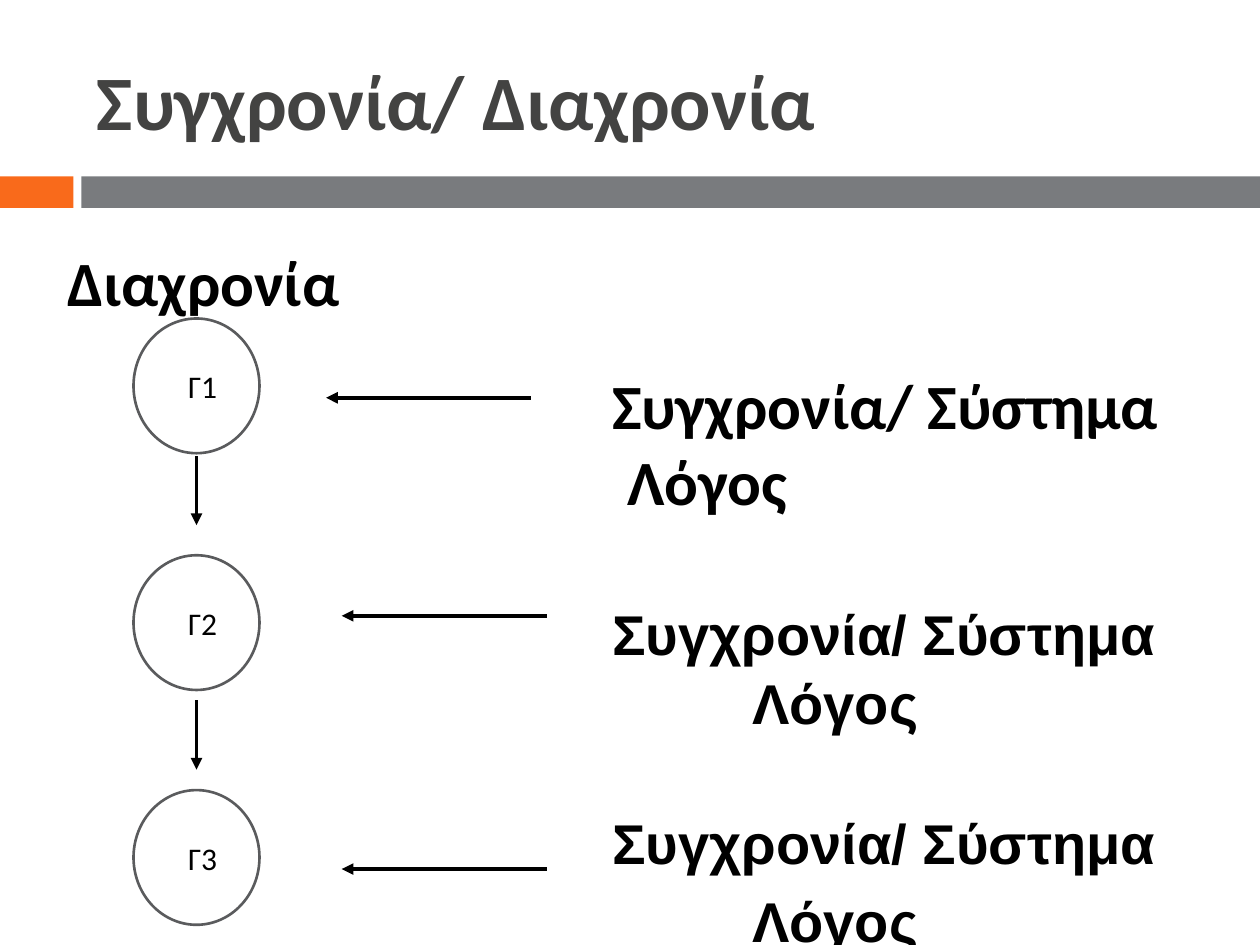
from lxml import etree
from pptx import Presentation
from pptx.dml.color import RGBColor
from pptx.enum import shapes, text
from pptx.oxml.ns import qn
from pptx.util import Pt

BLACK = RGBColor(0x00, 0x00, 0x00)
WHITE = RGBColor(0xFF, 0xFF, 0xFF)
TITLE_GREY = RGBColor(0x43, 0x43, 0x42)
OUTLINE_GREY = RGBColor(0x5A, 0x5B, 0x5D)
BAND_GREY = RGBColor(0x79, 0x7B, 0x7E)
ORANGE = RGBColor(0xF9, 0x6A, 0x1B)

CIRCLE_CENTRE = 112.3
CIRCLE_WIDTH, CIRCLE_HEIGHT = 72, 77
CIRCLES = [("Γ1", 182), ("Γ2", 317.3), ("Γ3", 451.5)]
DOWN_ARROW_TOPS = [260.6, 400.3]
DOWN_ARROW_LENGTH = 39.5
LEFT_ARROWS = [(303.3, 227.3), (312.3, 351.9), (312.3, 496.6)]  # start x, y
LEFT_ARROW_LENGTH = 117
# top, font name, size, indent of the second line, space before it
LABELS = [
    (206, "Calibri", 36, 8.5, 0),
    (339, "Arial", 32, 80, 1),
    (458.5, "Arial", 32, 80, 6),
]


def place(shape, left, top, width, height):
    shape.left, shape.top = Pt(left), Pt(top)
    shape.width, shape.height = Pt(width), Pt(height)


def format_paragraph(paragraph, font_name, size, color, bold=True):
    for run in paragraph.runs:
        run.font.name = font_name
        run.font.size = Pt(size)
        run.font.bold = bold
        run.font.color.rgb = color


def indent(paragraph, distance):
    """Indent the whole paragraph and switch its bullet off."""
    properties = paragraph._p.get_or_add_pPr()
    properties.set("marL", str(Pt(distance)))
    properties.set("indent", "0")
    etree.SubElement(properties, qn("a:buNone"))


def add_band(slide, left, width, color):
    band = slide.shapes.add_shape(
        shapes.MSO_SHAPE.RECTANGLE, Pt(left), Pt(100.8), Pt(width), Pt(18))
    band.shadow.inherit = False
    band.fill.solid()
    band.fill.fore_color.rgb = color
    band.line.fill.background()


def fill_title(title):
    place(title, 48.2, 18, 642, 77.8)
    title.text_frame.text = "Συγχρονία/ Διαχρονία"
    title.text_frame.vertical_anchor = text.MSO_ANCHOR.MIDDLE
    paragraph = title.text_frame.paragraphs[0]
    paragraph.alignment = text.PP_ALIGN.LEFT
    format_paragraph(paragraph, "Calibri", 44, TITLE_GREY)


def fill_heading(body):
    place(body, 7.2, 135.4, 705.6, 410.4)
    body.text_frame.text = "Διαχρονία"
    paragraph = body.text_frame.paragraphs[0]
    paragraph.space_before = Pt(0)
    indent(paragraph, 24)
    format_paragraph(paragraph, "Calibri", 36, BLACK)


def add_circle(slide, label, top):
    circle = slide.shapes.add_shape(
        shapes.MSO_SHAPE.OVAL, Pt(CIRCLE_CENTRE - CIRCLE_WIDTH / 2), Pt(top),
        Pt(CIRCLE_WIDTH), Pt(CIRCLE_HEIGHT))
    circle.shadow.inherit = False
    circle.fill.solid()
    circle.fill.fore_color.rgb = WHITE
    circle.line.color.rgb = OUTLINE_GREY
    circle.line.width = Pt(1.5)
    frame = circle.text_frame
    frame.text = label
    frame.margin_left = Pt(14)
    frame.vertical_anchor = text.MSO_ANCHOR.MIDDLE
    paragraph = frame.paragraphs[0]
    paragraph.alignment = text.PP_ALIGN.CENTER
    format_paragraph(paragraph, "Calibri", 18, BLACK, bold=False)


def add_arrow(slide, start_x, start_y, end_x, end_y):
    arrow = slide.shapes.add_connector(
        shapes.MSO_CONNECTOR.STRAIGHT,
        Pt(start_x), Pt(start_y), Pt(end_x), Pt(end_y))
    arrow.line.color.rgb = BLACK
    arrow.line.width = Pt(2.25)
    etree.SubElement(arrow.line._get_or_add_ln(), qn("a:tailEnd"), type="triangle")
    etree.SubElement(arrow._element.spPr, qn("a:effectLst"))


def add_label(slide, top, font_name, size, second_indent, second_space):
    box = slide.shapes.add_textbox(Pt(342.7), Pt(top), Pt(347), Pt(90))
    frame = box.text_frame
    frame.word_wrap = True
    frame.text = "Συγχρονία/ Σύστημα\nΛόγος"
    second = frame.paragraphs[1]
    second.space_before = Pt(second_space)
    indent(second, second_indent)
    for paragraph in frame.paragraphs:
        format_paragraph(paragraph, font_name, size, BLACK)


def main():
    presentation = Presentation()
    presentation.slide_width, presentation.slide_height = Pt(720), Pt(540)
    slide = presentation.slides.add_slide(presentation.slide_layouts[1])

    add_band(slide, 0, 42, ORANGE)
    add_band(slide, 46.5, 673.5, BAND_GREY)
    fill_title(slide.shapes.title)
    fill_heading(slide.placeholders[1])
    for label, top in CIRCLES:
        add_circle(slide, label, top)
    for top in DOWN_ARROW_TOPS:
        add_arrow(slide, CIRCLE_CENTRE, top, CIRCLE_CENTRE, top + DOWN_ARROW_LENGTH)
    for start, y in LEFT_ARROWS:
        add_arrow(slide, start, y, start - LEFT_ARROW_LENGTH, y)
    for label in LABELS:
        add_label(slide, *label)

    presentation.save("out.pptx")


if __name__ == "__main__":
    main()
